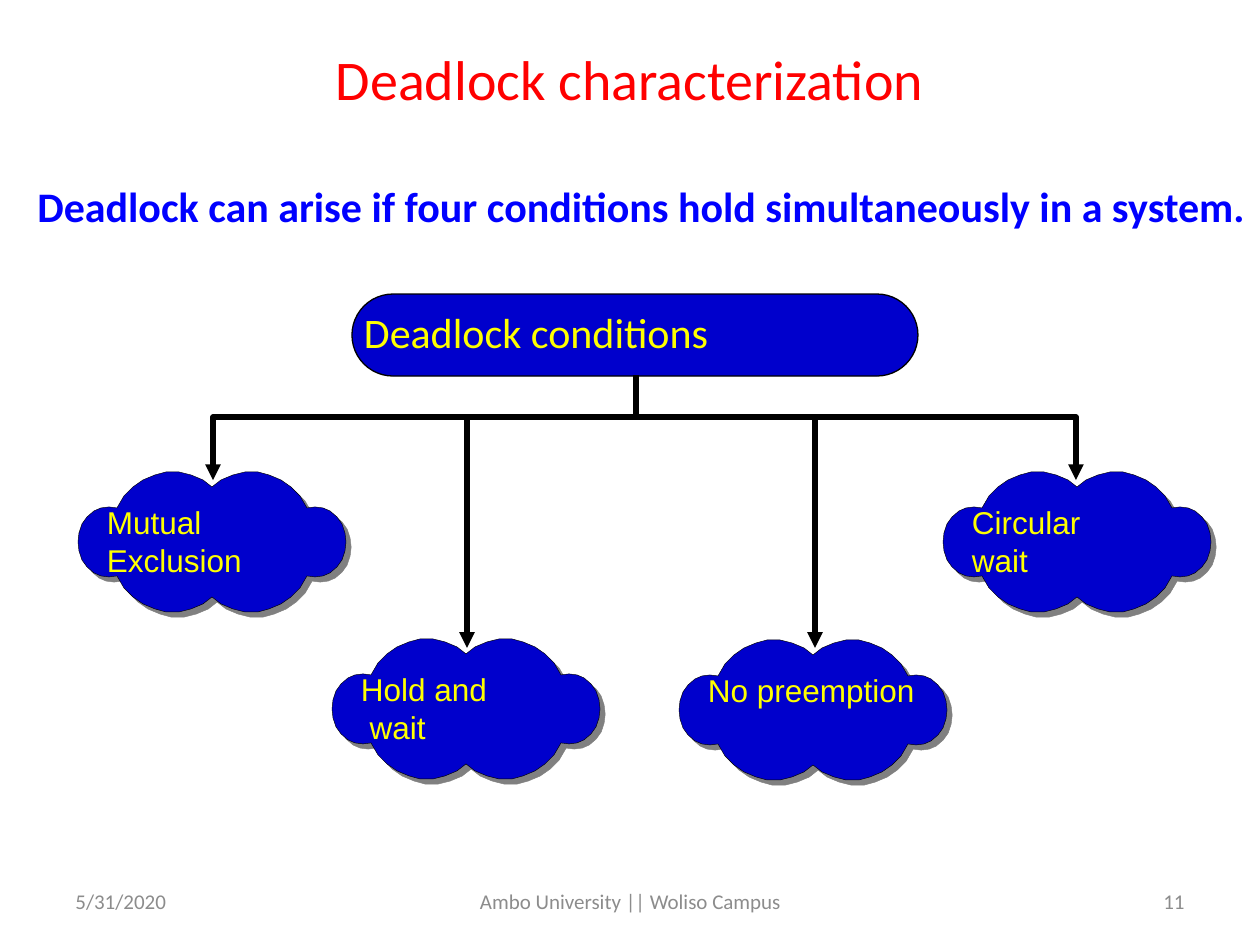
from lxml import etree
from pptx import Presentation
from pptx.dml.color import RGBColor
from pptx.enum.shapes import MSO_CONNECTOR, MSO_SHAPE
from pptx.enum.text import MSO_ANCHOR, MSO_AUTO_SIZE, PP_ALIGN
from pptx.oxml.ns import qn
from pptx.util import Pt

PX = 914400 / 126
STRAIGHT = MSO_CONNECTOR.STRAIGHT
PILL = MSO_SHAPE.ROUNDED_RECTANGLE
TOP, MIDDLE = MSO_ANCHOR.TOP, MSO_ANCHOR.MIDDLE
LEFT, CENTER, RIGHT = PP_ALIGN.LEFT, PP_ALIGN.CENTER, PP_ALIGN.RIGHT
FIT_SHAPE = MSO_AUTO_SIZE.SHAPE_TO_FIT_TEXT

BLACK = RGBColor(0x00, 0x00, 0x00)
NAVY = RGBColor(0x00, 0x00, 0xCC)
BLUE = RGBColor(0x00, 0x00, 0xFF)
YELLOW = RGBColor(0xFF, 0xFF, 0x00)
RED = RGBColor(0xFF, 0x00, 0x00)
GREY = RGBColor(0x8C, 0x8C, 0x8C)

CLOUD_QUARTER = [
    (-134, 0), (-133, -9), (-130, -18), (-125, -25), (-118, -31), (-111, -34),
    (-103, -35), (-95, -34), (-88, -46), (-79, -55), (-69, -62), (-57, -67),
    (-46, -70), (-33, -70), (-21, -67), (-9, -62), (0, -55),
]
CONDITIONS = [
    ("Mutual Exclusion", 212, 542),
    ("Hold and\n wait", 466, 709),
    ("No preemption", 813, 710),
    ("Circular\nwait", 1077, 542),
]
FOOTERS = [
    ("5/31/2020", 63, 294, LEFT),
    ("Ambo University || Woliso Campus", 431, 399, CENTER),
    ("11", 903, 294, RIGHT),
]
TRUNK_X, TRUNK_Y, BAR_Y = 636, 375, 417


def emu(*lengths):
    """Turn px lengths into EMU."""
    return [round(length * PX) for length in lengths]


def write(shape, text, size, color, font="Calibri", bold=False, align=LEFT, anchor=MIDDLE):
    """Put formatted text into a shape."""
    frame = shape.text_frame
    frame.word_wrap = True
    frame.vertical_anchor = anchor
    frame.text = text
    for para in frame.paragraphs:
        para.alignment = align
        para.font.name = font
        para.font.size = Pt(size)
        para.font.bold = bold
        para.font.color.rgb = color
    return frame


def clear_margins(frame, top=0):
    """Remove the text insets, keeping an optional top one."""
    frame.margin_left = frame.margin_right = frame.margin_bottom = 0
    frame.margin_top = emu(top)[0]


def add_text(slide, box, text, size, color, **style):
    """Add a text box."""
    return write(slide.shapes.add_textbox(*emu(*box)), text, size, color, **style)


def paint(shape, line_width):
    """Give a shape the navy fill and a black outline without shadow."""
    shape.shadow.inherit = False
    shape.fill.solid()
    shape.fill.fore_color.rgb = NAVY
    shape.line.color.rgb = BLACK
    shape.line.width = Pt(line_width)


def add_outline(slide, points, close):
    """Add a freeform through points given in px."""
    builder = slide.shapes.build_freeform(*points[0], scale=PX)
    builder.add_line_segments(points[1:], close=close)
    return builder.convert_to_shape()


def add_pill(slide, box, text):
    """Add the root box of the tree."""
    pill = slide.shapes.add_shape(PILL, *emu(*box))
    pill.adjustments[0] = 0.5
    paint(pill, 0.75)
    clear_margins(write(pill, text, 24, YELLOW, anchor=TOP))


def add_cloud(slide, text, center_x, center_y):
    """Add a cloud with a hard shadow and its label."""
    upper = CLOUD_QUARTER + [(-x, y) for x, y in CLOUD_QUARTER[-2::-1]]
    ring = upper + [(x, -y) for x, y in upper[-2:0:-1]]
    cloud = add_outline(slide, [(center_x + x, center_y + y) for x, y in ring], True)
    paint(cloud, 0.25)
    effects = cloud.element.spPr.find(qn("a:effectLst"))
    shadow = etree.SubElement(effects, qn("a:outerShdw"), blurRad="0", dist="53340",
                              dir="2700000", algn="ctr", rotWithShape="0")
    etree.SubElement(shadow, qn("a:srgbClr"), val="808080")
    label = add_text(slide, (center_x - 105, center_y - 56, 214, 106), text, 18,
                     YELLOW, font="Arial", anchor=TOP)
    clear_margins(label, top=17)


def style_arrow(arrow):
    """Make a line thick and black with an arrowhead at its end."""
    arrow.line.color.rgb = BLACK
    arrow.line.width = Pt(3)
    properties = arrow.element.spPr
    etree.SubElement(properties.find(qn("a:ln")), qn("a:tailEnd"), type="triangle")


def add_elbow(slide, x, end_y):
    """Add a bent arrow from the root box to an outer cloud."""
    route = [(TRUNK_X, TRUNK_Y), (TRUNK_X, BAR_Y), (x, BAR_Y), (x, end_y)]
    elbow = add_outline(slide, route, False)
    elbow.shadow.inherit = False
    elbow.fill.background()
    style_arrow(elbow)


def add_drop(slide, x, end_y):
    """Add a straight arrow from the bar to an inner cloud."""
    drop = slide.shapes.add_connector(STRAIGHT, *emu(x, BAR_Y + 1, x, end_y))
    style_arrow(drop)
    etree.SubElement(drop.element.spPr, qn("a:effectLst"))


def add_title(slide, box, text):
    """Place and format the title placeholder."""
    title = slide.shapes.title
    title.left, title.top, title.width, title.height = emu(*box)
    write(title, text, 32, RED, align=CENTER).auto_size = FIT_SHAPE


def main():
    """Build the slide and save the deck."""
    deck = Presentation()
    deck.slide_width, deck.slide_height = emu(1260, 945)
    slide = deck.slides.add_slide(deck.slide_layouts[5])
    add_title(slide, (63, 38, 1134, 81), "Deadlock characterization")
    add_text(slide, (25, 147, 1235, 117),
             "Deadlock can arise if four conditions hold simultaneously in a system.",
             24, BLUE, bold=True)
    add_pill(slide, (352, 294, 566, 82), "Deadlock conditions")
    for x in (213, 1076):
        add_elbow(slide, x, 480)
    for x in (467, 815):
        add_drop(slide, x, 648)
    for condition in CONDITIONS:
        add_cloud(slide, *condition)
    for text, left, width, align in FOOTERS:
        add_text(slide, (left, 876, width, 50), text, 12, GREY, align=align)
    deck.save("out.pptx")


if __name__ == "__main__":
    main()
